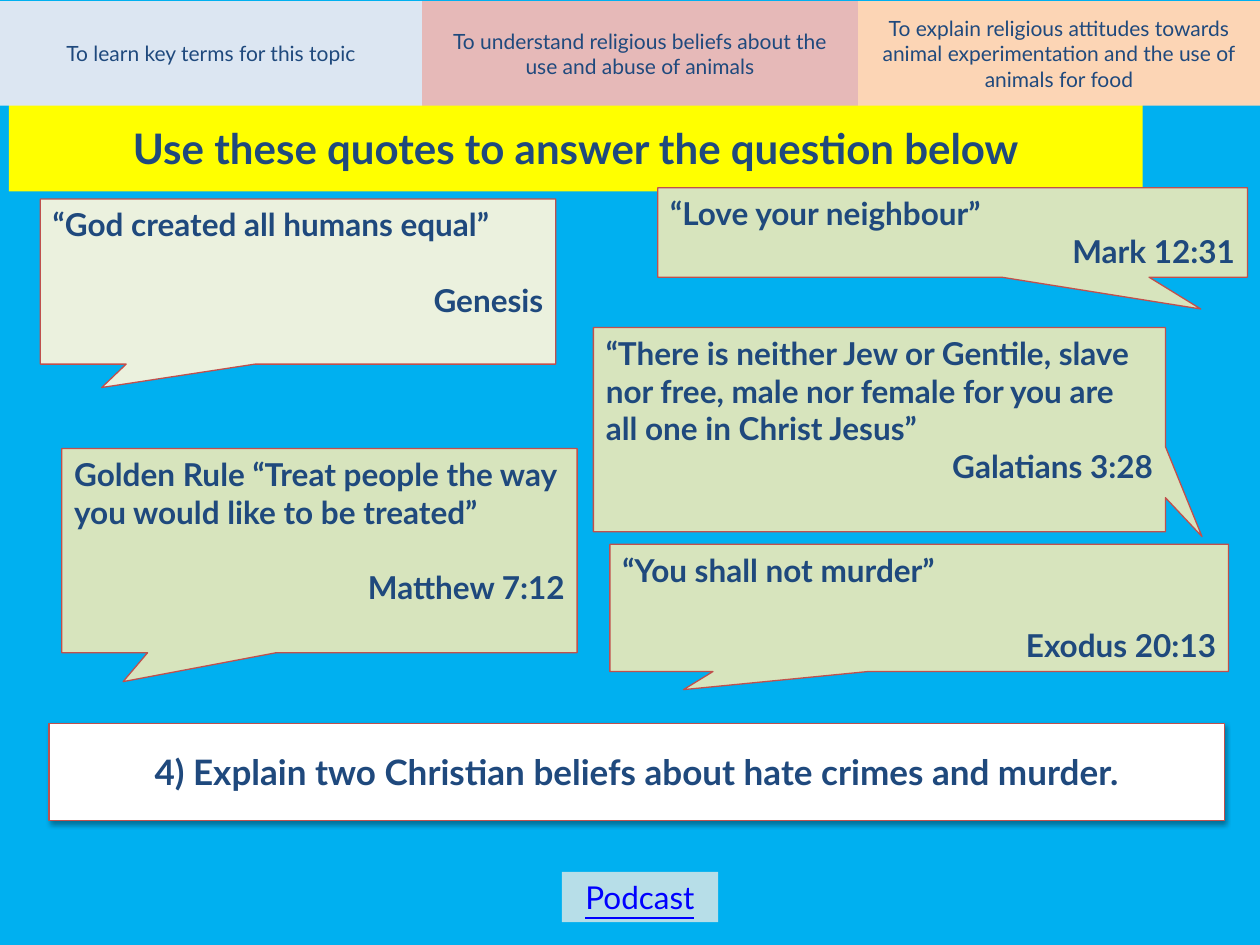
from dataclasses import dataclass

from pptx import Presentation, util as u
from pptx.dml.color import RGBColor
from pptx.enum import shapes, text
from pptx.oxml import parse_xml
from pptx.oxml.ns import nsdecls, qn


@dataclass(frozen=True)
class Theme:
    font: str = "Lato"
    background: str = "00B0F0"
    ink: str = "1F497D"
    outline: str = "C0504D"
    link: str = "0000FF"
    title: str = "FFFF00"
    question: str = "FFFFFF"
    button: str = "B7DEE8"
    quote: str = "D7E4BD"
    pale_quote: str = "EBF1DE"
    objectives: tuple = ("DCE6F2", "E6B9B8", "FCD5B5")
    small: int = 12
    body: int = 18
    large: int = 20
    heading: int = 24
    line_spacing: float = 1.2


LEFT, CENTER, RIGHT = (text.PP_ALIGN.LEFT, text.PP_ALIGN.CENTER,
                       text.PP_ALIGN.RIGHT)
COLUMNS, ROWS = 100, 75


def color(value):
    return RGBColor.from_string(value)


def set_format(target, values):
    for name, value in values.items():
        setattr(target, name, value)


class QuoteSlide:
    def __init__(self, presentation, theme):
        self.theme = theme
        self.column = presentation.slide_width / COLUMNS
        self.row = presentation.slide_height / ROWS
        self.slide = presentation.slides.add_slide(
            presentation.slide_layouts[6])
        background = self.slide.background.fill
        background.solid()
        background.fore_color.rgb = color(theme.background)

    def box(self, area, fill, outlined=False,
            kind=shapes.MSO_SHAPE.RECTANGLE):
        """Add a filled shape; area is left, top, width, height in grid units."""
        left, top, width, height = area
        shape = self.slide.shapes.add_shape(
            kind, round(left * self.column), round(top * self.row),
            round(width * self.column), round(height * self.row))
        shape.shadow.inherit = False
        shape.fill.solid()
        shape.fill.fore_color.rgb = color(fill)
        if outlined:
            shape.line.color.rgb = color(self.theme.outline)
            shape.line.width = u.Pt(0.75)
        else:
            shape.line.fill.background()
        return shape

    def add_lines(self, shape, lines, size, anchor=text.MSO_ANCHOR.MIDDLE,
                  wrap=True, ink=None, **font):
        """Fill a shape with lines of (wording, alignment, space before)."""
        frame = shape.text_frame
        set_format(frame, {"word_wrap": wrap, "vertical_anchor": anchor})
        style = {"name": self.theme.font, "size": u.Pt(size), **font}
        for index, (wording, alignment, space) in enumerate(lines):
            paragraph = (frame.add_paragraph() if index
                         else frame.paragraphs[0])
            set_format(paragraph, {"alignment": alignment,
                                   "space_before": u.Pt(space)})
            run = paragraph.add_run()
            run.text = wording
            set_format(run.font, style)
            run.font.color.rgb = color(ink or self.theme.ink)

    def label(self, area, fill, wording, size, space=0, outlined=False, **style):
        shape = self.box(area, fill, outlined)
        self.add_lines(shape, [(wording, CENTER, space)], size, **style)
        return shape

    def callout(self, area, quote, source, gap_lines=0,
                tail=(-0.381, 0.642), fill=None):
        shape = self.box(area, fill or self.theme.quote, True,
                         shapes.MSO_SHAPE.RECTANGULAR_CALLOUT)
        for index, value in enumerate(tail):
            shape.adjustments[index] = value
        size = self.theme.body
        gap = gap_lines * size * self.theme.line_spacing
        self.add_lines(shape, [(quote, LEFT, 0), (source, RIGHT, gap)], size,
                       anchor=text.MSO_ANCHOR.TOP, bold=True)

    def drop_shadow(self, shape):
        effects = shape._element.spPr.find(qn("a:effectLst"))
        effects.append(parse_xml(
            f'<a:outerShdw {nsdecls("a")} blurRad="{u.Pt(3.1)}" '
            f'dist="{u.Pt(1.8)}" dir="5400000" rotWithShape="0">'
            '<a:srgbClr val="000000"><a:alpha val="35000"/></a:srgbClr>'
            '</a:outerShdw>'))


def main():
    presentation = Presentation()
    presentation.slide_width = u.Inches(10)
    presentation.slide_height = u.Inches(7.5)
    theme = Theme()
    page = QuoteSlide(presentation, theme)

    # Quotes and title, from back to front
    page.callout((3.2, 15.8, 40.9, 13.1), "“God created all humans equal”",
                 "Genesis", gap_lines=1, fill=theme.pale_quote)
    page.label((0.7, 8.3, 90, 6.9), theme.title,
               "Use these quotes to answer the question below",
               theme.heading, space=6, bold=True)
    page.callout((52.2, 14.9, 46.8, 7.1), "“Love your neighbour”",
                 "Mark 12:31", tail=(0.421, 0.856))

    # Learning objectives, side by side across the top
    edges = (0, 33.5, 68.1, COLUMNS)
    objectives = (
        "To learn key terms for this topic",
        "To understand religious beliefs about the use and abuse of animals",
        "To explain religious attitudes towards animal experimentation "
        "and the use of animals for food",
    )
    for left, right, fill, wording in zip(edges, edges[1:],
                                          theme.objectives, objectives):
        page.label((left, 0.1, right - left, 8.3), fill, wording, theme.small)

    # Question
    question = page.label(
        (3.9, 57.4, 93.3, 7.7), theme.question,
        "4) Explain two Christian beliefs about hate crimes and murder.",
        theme.large, space=6, outlined=True, bold=True)
    page.drop_shadow(question)

    # Remaining quotes
    page.callout((47.1, 26, 45.4, 16.2),
                 "“There is neither Jew or Gentile, slave nor free, male nor "
                 "female for you are all one in Christ Jesus”",
                 "Galatians 3:28", tail=(0.564, 0.524))
    page.callout((4.9, 35.6, 40.9, 16.2),
                 "Golden Rule “Treat people the way you would like to be "
                 "treated”", "Matthew 7:12", gap_lines=1)
    page.callout((48.4, 43.2, 49.1, 10.1), "“You shall not murder”",
                 "Exodus 20:13", gap_lines=1)

    # Podcast button
    page.label((44.6, 69.2, 12.4, 4), theme.button, "Podcast", theme.body,
               wrap=False, ink=theme.link, underline=True)

    presentation.save("out.pptx")


if __name__ == "__main__":
    main()
